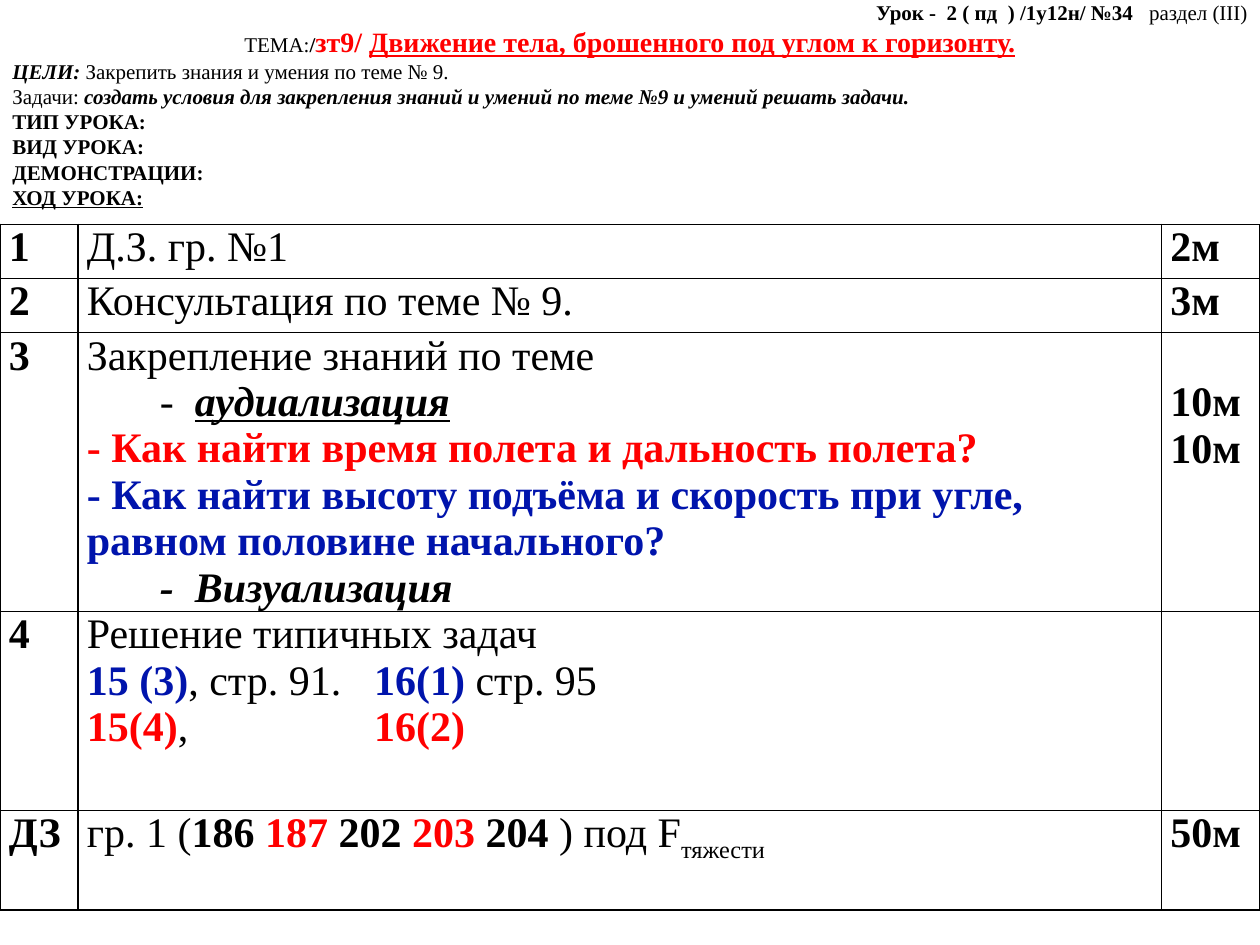
from lxml import etree
from pptx import Presentation
from pptx.dml.color import RGBColor
from pptx.enum.text import MSO_ANCHOR, PP_ALIGN
from pptx.oxml.ns import qn
from pptx.util import Inches, Pt

FONT = "Times New Roman"
COLORS = {"black": "000000", "red": "FF0000", "blue": "0014AC"}

# A paragraph is a list of runs: (text, flags, colour, size).
# Flags: b bold, i italic, u underlined, s subscript; the last two are optional.
HEADER = [
    [("Урок -  2 ( пд  ) /1у12н/ №34   ", "b"), ("раздел (III)", "")],
    [("ТЕМА:", ""), ("/", "b"), ("зт9/ ", "b", "red", 16),
     ("Движение тела, брошенного под углом к горизонту.", "bu", "red", 16)],
    [("ЦЕЛИ:", "bi"), (" Закрепить знания и умения по теме № 9.", "")],
    [("Задачи: ", ""),
     ("создать условия для закрепления знаний и умений по теме №9 "
      "и умений решать задачи.", "bi")],
    [("ТИП УРОКА:", "b")],
    [("ВИД УРОКА:", "b")],
    [("ДЕМОНСТРАЦИИ:", "b")],
    [("ХОД УРОКА:", "bu")],
]
HEADER_ALIGN = {0: PP_ALIGN.RIGHT, 1: PP_ALIGN.CENTER}

# Lesson stages: number, content paragraphs, times
STAGES = [
    ("1", [[("Д.З. гр. №1", "")]], ["2м"]),
    ("2", [[("Консультация по теме № 9.", "")]], ["3м"]),
    ("3", [
        [("Закрепление знаний по теме", "")],
        [("-  ", ""), ("аудиализация", "biu")],
        [("- Как найти время полета и дальность полета?", "b", "red")],
        [("- Как найти высоту подъёма и скорость при угле, "
          "равном половине начального?", "b", "blue")],
        [("-  Визуализация", "bi")],
    ], ["10м", "10м"]),
    ("4", [
        [("Решение типичных задач", "")],
        [("15 (3)", "b", "blue"), (", стр. 91.\t", ""),
         ("16(1)", "b", "blue"), (" стр. 95", "")],
        [("15(4)", "b", "red"), (",\t", ""), ("16(2)", "b", "red")],
    ], []),
    ("ДЗ", [[("гр. 1 (", ""), ("186 ", "b"), ("187 ", "b", "red"),
             ("202 ", "b"), ("203 ", "b", "red"), ("204", "b"),
             (" ) под F", ""), ("тяжести", "s")]], ["50м"]),
]
COL_WIDTHS = [0.62, 8.6, 0.78]
ROW_HEIGHTS = [0.43, 0.43, 2.21, 1.58, 0.79]
INDENTED = {(2, 1), (2, 4)}   # (stage, paragraph)
INDENT, TAB_STOP = 0.58, 2.28
TIME_OFFSET = {2: 0.37}       # times start beside the second line


def write(tf, paragraphs, size):
    """Fill a text frame and return its paragraphs."""
    for i, runs in enumerate(paragraphs):
        p = tf.paragraphs[0] if i == 0 else tf.add_paragraph()
        p.font.name, p.font.size = FONT, Pt(size)
        for text, flags, *extra in runs:
            color, run_size = (extra + ["black", size][len(extra):])
            r = p.add_run()
            r.text = text
            font = r.font
            font.name, font.size = FONT, Pt(run_size)
            font.bold, font.italic = "b" in flags, "i" in flags
            font.underline = "u" in flags
            font.color.rgb = RGBColor.from_string(COLORS[color])
            if "s" in flags:
                r._r.get_or_add_rPr().set("baseline", "-25000")
    return tf.paragraphs


def add_borders(cell):
    tcPr = cell._tc.get_or_add_tcPr()
    for i, side in enumerate(("lnL", "lnR", "lnT", "lnB")):
        ln = etree.Element(qn(f"a:{side}"), w=str(Pt(1)))
        fill = etree.SubElement(ln, qn("a:solidFill"))
        etree.SubElement(fill, qn("a:srgbClr"), val=COLORS["black"])
        tcPr.insert(i, ln)


def add_tab_stop(p):
    tabs = etree.SubElement(p._p.get_or_add_pPr(), qn("a:tabLst"))
    etree.SubElement(tabs, qn("a:tab"), pos=str(Inches(TAB_STOP)), algn="l")


prs = Presentation()
prs.slide_width, prs.slide_height = Inches(10), Inches(7.5)
s = prs.slides.add_slide(prs.slide_layouts[6])

# Lesson plan table
table = s.shapes.add_table(
    len(STAGES), len(COL_WIDTHS), Inches(0), Inches(1.78),
    Inches(sum(COL_WIDTHS)), Inches(sum(ROW_HEIGHTS))).table
table.first_row = table.horz_banding = False
for col, width in zip(table.columns, COL_WIDTHS):
    col.width = Inches(width)
for row, height in zip(table.rows, ROW_HEIGHTS):
    row.height = Inches(height)

for i, (number, content, times) in enumerate(STAGES):
    columns = [[[(number, "b")]], content, [[(t, "b")] for t in times]]
    for j, paragraphs in enumerate(columns):
        cell = table.cell(i, j)
        cell.margin_left = cell.margin_right = Inches(0.07)
        cell.margin_top = cell.margin_bottom = 0
        cell.fill.background()
        add_borders(cell)
        for k, p in enumerate(write(cell.text_frame, paragraphs, 24)):
            if j == 1 and (i, k) in INDENTED:
                p._p.get_or_add_pPr().set("marL", str(Inches(INDENT)))
            if "\t" in p.text:
                add_tab_stop(p)
    table.cell(i, 2).margin_top = Inches(TIME_OFFSET.get(i, 0))

# Lesson header
box = s.shapes.add_textbox(Inches(0), Inches(-0.06), Inches(10), Inches(1.78))
tf = box.text_frame
tf.word_wrap = True
tf.vertical_anchor = MSO_ANCHOR.MIDDLE
for i, p in enumerate(write(tf, HEADER, 12)):
    p.alignment = HEADER_ALIGN.get(i, PP_ALIGN.LEFT)

prs.save("out.pptx")
